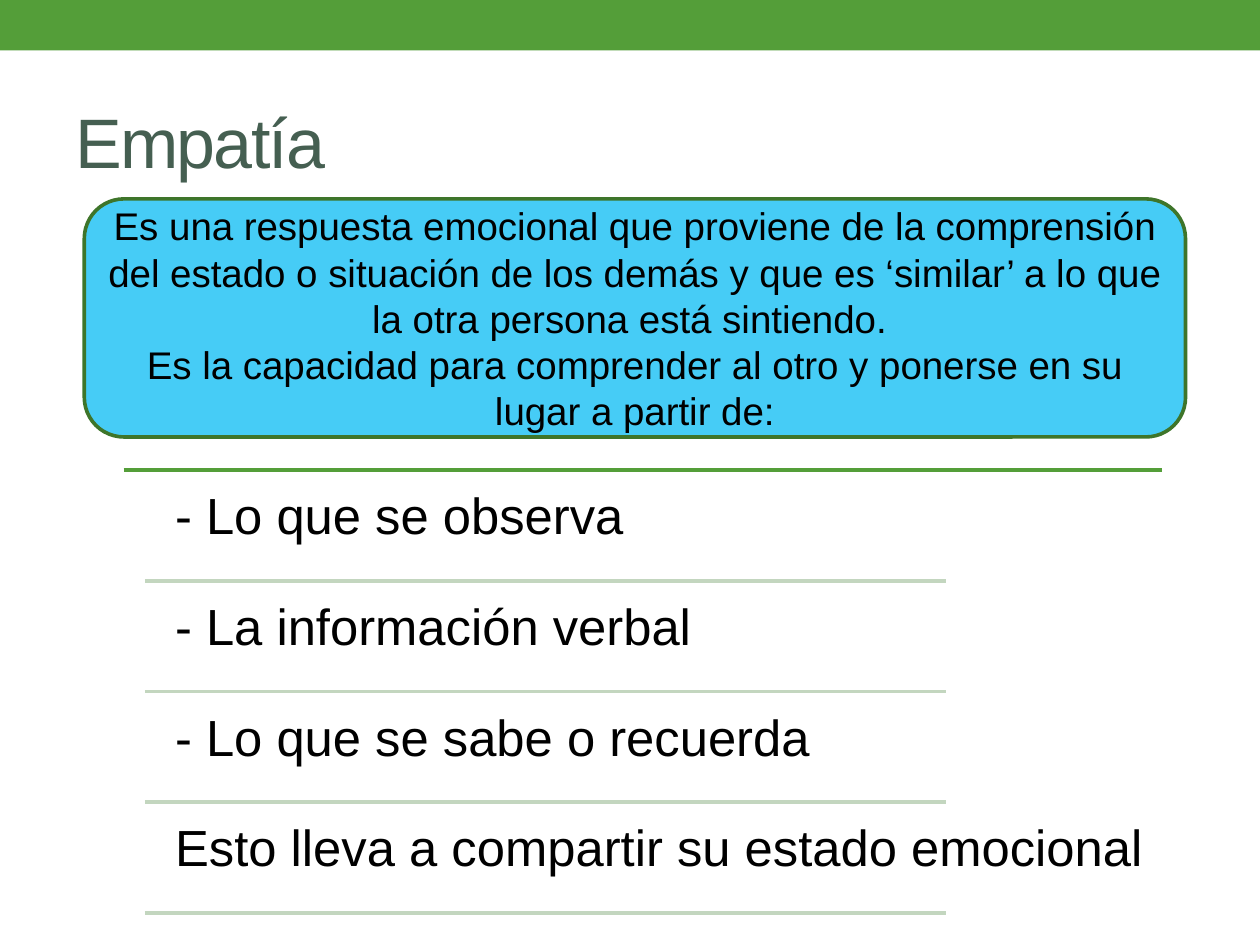
from pptx import Presentation
from pptx.dml.color import RGBColor
from pptx.enum.shapes import MSO_CONNECTOR as Connector, MSO_SHAPE as Preset
from pptx.enum.text import MSO_ANCHOR as Anchor, PP_ALIGN as Align
from pptx.oxml.ns import qn
from pptx.util import Cm, Pt
from lxml.etree import SubElement

COLORS = {
    "green": "549E39",
    "dark_green": "3E752A",
    "pale_green": "C3D6BF",
    "slate": "455F51",
    "sky": "46CCF6",
    "black": "000000",
}
DEFINITION = [
    "Es una respuesta emocional que proviene de la comprensión del estado o situación "
    "de los demás y que es ‘similar’ a lo que la otra persona está sintiendo. ",
    "Es la capacidad para comprender al otro y ponerse en su lugar a partir de:",
]
SOURCES = [
    ("- Lo que se observa", 15.85),
    ("- La información verbal", 15.85),
    ("- Lo que se sabe o recuerda", 15.85),
    ("Esto lleva a compartir su estado emocional", 20.19),
]
ROW_STEP = 2.23


def apply(target, values):
    for name, value in values.items():
        setattr(target, name, value)


class SlideBuilder:
    font = "Arial"
    line_width = Pt(2.08)

    def __init__(self, page):
        self.page = page

    def color(self, name):
        return RGBColor.from_string(COLORS[name])

    def outline(self, line, color):
        line.color.rgb = self.color(color)
        line.width = self.line_width

    def fill_text(self, box, texts, size, color="black", frame=None, para=None, spacing=None):
        text_frame = box.text_frame
        apply(text_frame, {"word_wrap": True, **(frame or {})})
        for index, text in enumerate(texts):
            paragraph = text_frame.add_paragraph() if index else text_frame.paragraphs[0]
            apply(paragraph, para or {})
            span = paragraph.add_run()
            span.text = text
            apply(span.font, {"name": self.font, "size": Pt(size)})
            span.font.color.rgb = self.color(color)
            if spacing is not None:
                span.font._element.set("spc", str(spacing))

    def shape(self, preset, left, top, width, height, fill, border=None):
        shape = self.page.shapes.add_shape(preset, Cm(left), Cm(top), Cm(width), Cm(height))
        shape.shadow.inherit = False
        shape.fill.solid()
        shape.fill.fore_color.rgb = self.color(fill)
        if border:
            self.outline(shape.line, border)
        else:
            shape.line.fill.background()
        return shape

    def text(self, left, top, width, height, texts, size, **style):
        box = self.page.shapes.add_textbox(Cm(left), Cm(top), Cm(width), Cm(height))
        self.fill_text(box, texts, size, **style)

    def rule(self, left, right, top, color):
        rule = self.page.shapes.add_connector(
            Connector.STRAIGHT, Cm(left), Cm(top), Cm(right), Cm(top))
        self.outline(rule.line, color)
        SubElement(rule._element.spPr, qn("a:effectLst"))


def main():
    deck = Presentation()
    apply(deck, {"slide_width": Cm(25.4), "slide_height": Cm(19.05)})
    builder = SlideBuilder(deck.slides.add_slide(deck.slide_layouts[6]))

    builder.shape(Preset.RECTANGLE, 0, 0, 25.4, 1.02, "green")
    builder.text(1.27, 1.47, 22.86, 2.74, ["Empatía"], 40, color="slate",
                 frame={"vertical_anchor": Anchor.MIDDLE}, spacing=-100)

    definition = builder.shape(Preset.ROUNDED_RECTANGLE, 1.7, 4.01, 22.2, 4.8,
                               "sky", "dark_green")
    builder.fill_text(definition, DEFINITION, 22,
                      frame={"vertical_anchor": Anchor.MIDDLE},
                      para={"alignment": Align.CENTER})

    builder.rule(2.49, 23.42, 9.47, "green")
    sides = ("left", "top", "right", "bottom")
    insets = {f"margin_{side}": Cm(0.3) for side in sides}
    for index, (text, width) in enumerate(SOURCES):
        offset = index * ROW_STEP
        builder.text(3.23, 9.6 + offset, width, 2.13, [text], 29,
                     frame=insets, para={"line_spacing": 0.9})
        builder.rule(2.92, 19.08, 11.71 + offset, "pale_green")

    deck.save("out.pptx")


if __name__ == "__main__":
    main()
